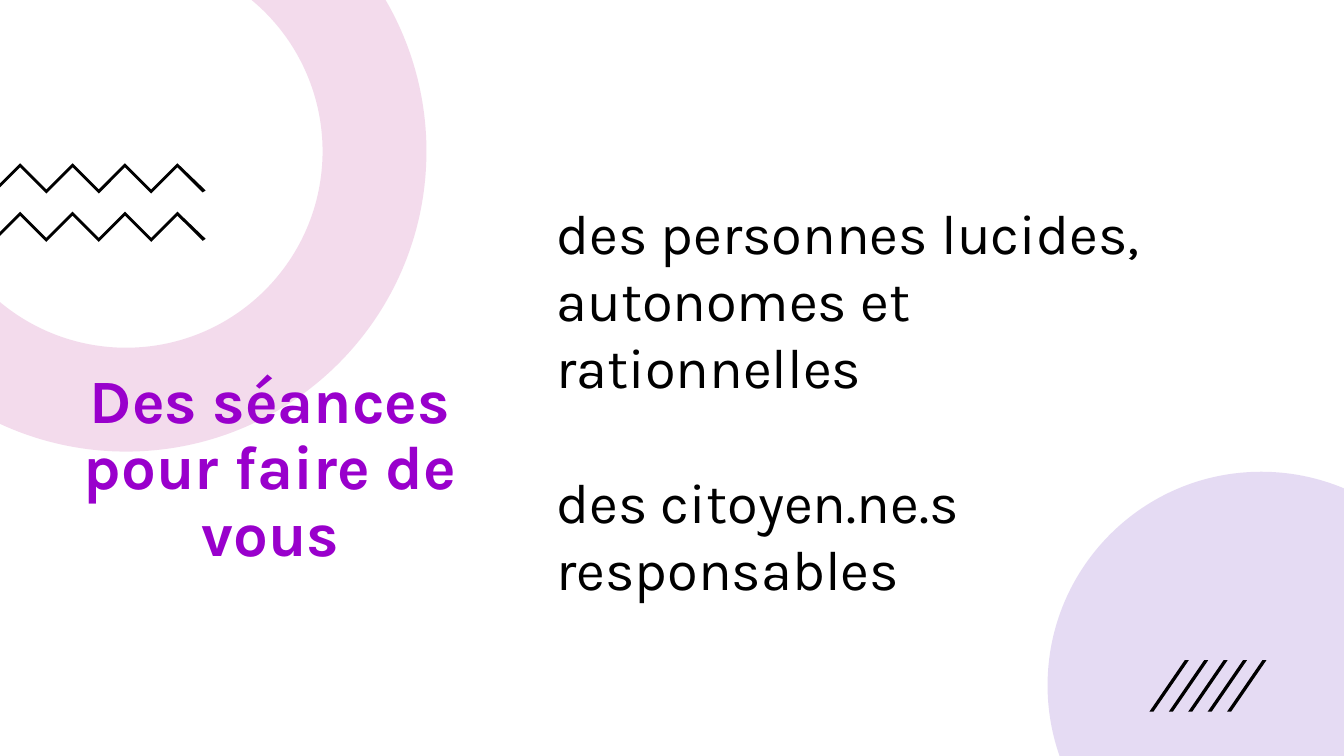
from dataclasses import dataclass
from math import acos, asin, cos, degrees, pi, radians, sin, tan

from lxml.etree import SubElement
from pptx import Presentation
from pptx.dml.color import RGBColor
from pptx.enum.text import MSO_ANCHOR, MSO_AUTO_SIZE, PP_ALIGN
from pptx.oxml import parse_xml
from pptx.oxml.ns import nsdecls, qn
from pptx.util import Inches, Pt

Point = tuple[float, float]
Segment = tuple[Point, ...]
WIDTH, HEIGHT = 13.33, 7.5
FONT = "Karla"
BLACK, PURPLE, PINK, VIOLET = "000000", "9900CC", "C34DA3", "814DC3"


@dataclass
class Outline:
    segments: list[Segment]
    color: str = BLACK
    opacity: int = 100


def set_color(fmt, color: str) -> None:
    fmt.rgb = RGBColor.from_string(color)


def bend_curves(sp, segments: list[Segment]) -> None:
    lines = iter(list(sp._element.iter(qn("a:lnTo"))))
    for segment in segments:
        group = [next(lines) for _ in segment]
        if len(group) == 3:
            curve = parse_xml(f"<a:cubicBezTo {nsdecls('a')}/>")
            group[0].addprevious(curve)
            for line in group:
                curve.append(line[0])
                line.getparent().remove(line)


def draw_outline(s, outline: Outline) -> None:
    points = [(Inches(x), Inches(y)) for segment in outline.segments for x, y in segment]
    builder = s.shapes.build_freeform(*points[0], scale=1.0)
    builder.add_line_segments(points[1:], close=True)
    sp = builder.convert_to_shape()
    bend_curves(sp, outline.segments[1:])
    sp.shadow.inherit = False
    sp.line.fill.background()
    sp.fill.solid()
    set_color(sp.fill.fore_color, outline.color)
    if outline.opacity < 100:
        clr = sp._element.spPr.find(f"{qn('a:solidFill')}/{qn('a:srgbClr')}")
        SubElement(clr, qn("a:alpha"), val=str(outline.opacity * 1000))


def polygon(points: list[Point]) -> Outline:
    return Outline([(point,) for point in points])


def arc(x: float, y: float, radius: float, start: float, end: float) -> list[Segment]:
    def at(angle: float, shift: float = 0) -> Point:
        return (x + radius * (cos(angle) - shift * sin(angle)),
                y + radius * (sin(angle) + shift * cos(angle)))

    low, high = sorted((start, end))
    quarters = [q for q in range(-360, 361, 90) if low < q < high]
    stops = [radians(a) for a in sorted([low, *quarters, high], reverse=start > end)]
    segments: list[Segment] = [(at(stops[0]),)]
    for a, b in zip(stops, stops[1:]):
        pull = 4 / 3 * tan((b - a) / 4)
        segments.append((at(a, pull), at(b, -pull), at(b)))
    return segments


def ring() -> Outline:
    x, y, outer, inner = 1.25, 1.5, 2.98, 1.95

    def ends(radius: float) -> Point:
        return degrees(asin(-y / radius)), degrees(acos(-x / radius))

    return Outline(arc(x, y, outer, *ends(outer)) + arc(x, y, inner, *ends(inner)[::-1]),
                   PINK, 20)


def disc() -> Outline:
    x, y, radius = 12.51, 6.8, 2.12
    start = degrees(pi - asin((HEIGHT - y) / radius))
    end = 360 - degrees(acos((WIDTH - x) / radius))
    return Outline(arc(x, y, radius, start, end) + [((WIDTH, HEIGHT),)], VIOLET, 20)


def zigzag(top: float) -> Outline:
    upper = [(0.2 + 0.26 * i, top + 0.26 * (i % 2)) for i in range(7)]
    lower = [(x, y + 0.04) for x, y in reversed(upper)]
    tip = [(2.04, top + 0.27), (2.01, top + 0.29)]
    return polygon(upper + tip + lower + [(0, top + 0.24), (0, top + 0.2)])


def slash(left: float) -> Outline:
    top, bottom = 6.55, 7.06
    return polygon([(left + 0.04, bottom), (left, bottom),
                    (left + 0.35, top), (left + 0.39, top)])


def add_text(p, text: str, *, size: float, color: str = BLACK, bold: bool = False,
             align=PP_ALIGN.LEFT, spacing: float = 1.0, before: float = 0) -> None:
    p.alignment = align
    p.line_spacing = spacing
    p.space_before = Pt(before)
    r = p.add_run()
    r.text = text
    r.font.name = FONT
    r.font.size = Pt(size)
    r.font.bold = bold
    set_color(r.font.color, color)


def place_title(s) -> None:
    sp = s.shapes.title
    sp.left, sp.top, sp.width, sp.height = map(Inches, (0.17, 2.9, 5.02, 3.52))
    sp._element.getparent().append(sp._element)
    tf = sp.text_frame
    tf.word_wrap = True
    tf.auto_size = MSO_AUTO_SIZE.NONE
    tf.vertical_anchor = MSO_ANCHOR.MIDDLE
    add_text(tf.paragraphs[0], "Des séances pour faire de vous", size=44,
             color=PURPLE, bold=True, align=PP_ALIGN.CENTER, spacing=0.9)


def add_goals(s) -> None:
    tf = s.shapes.add_textbox(*map(Inches, (5.42, 1.92, 6.73, 3.47))).text_frame
    tf.word_wrap = True
    tf.auto_size = MSO_AUTO_SIZE.SHAPE_TO_FIT_TEXT
    add_text(tf.paragraphs[0], "des personnes lucides, autonomes et rationnelles", size=40)
    add_text(tf.add_paragraph(), "des citoyen.ne.s responsables", size=40, before=48)


def main() -> None:
    prs = Presentation()
    prs.slide_width, prs.slide_height = Inches(WIDTH), Inches(HEIGHT)
    s = prs.slides.add_slide(prs.slide_layouts[5])
    draw_outline(s, ring())
    place_title(s)
    zigzags = [zigzag(top) for top in (1.62, 2.1)]
    slashes = [slash(11.4 + 0.1925 * i) for i in range(5)]
    for outline in [*zigzags, disc(), *slashes]:
        draw_outline(s, outline)
    add_goals(s)
    prs.save("out.pptx")


if __name__ == "__main__":
    main()
